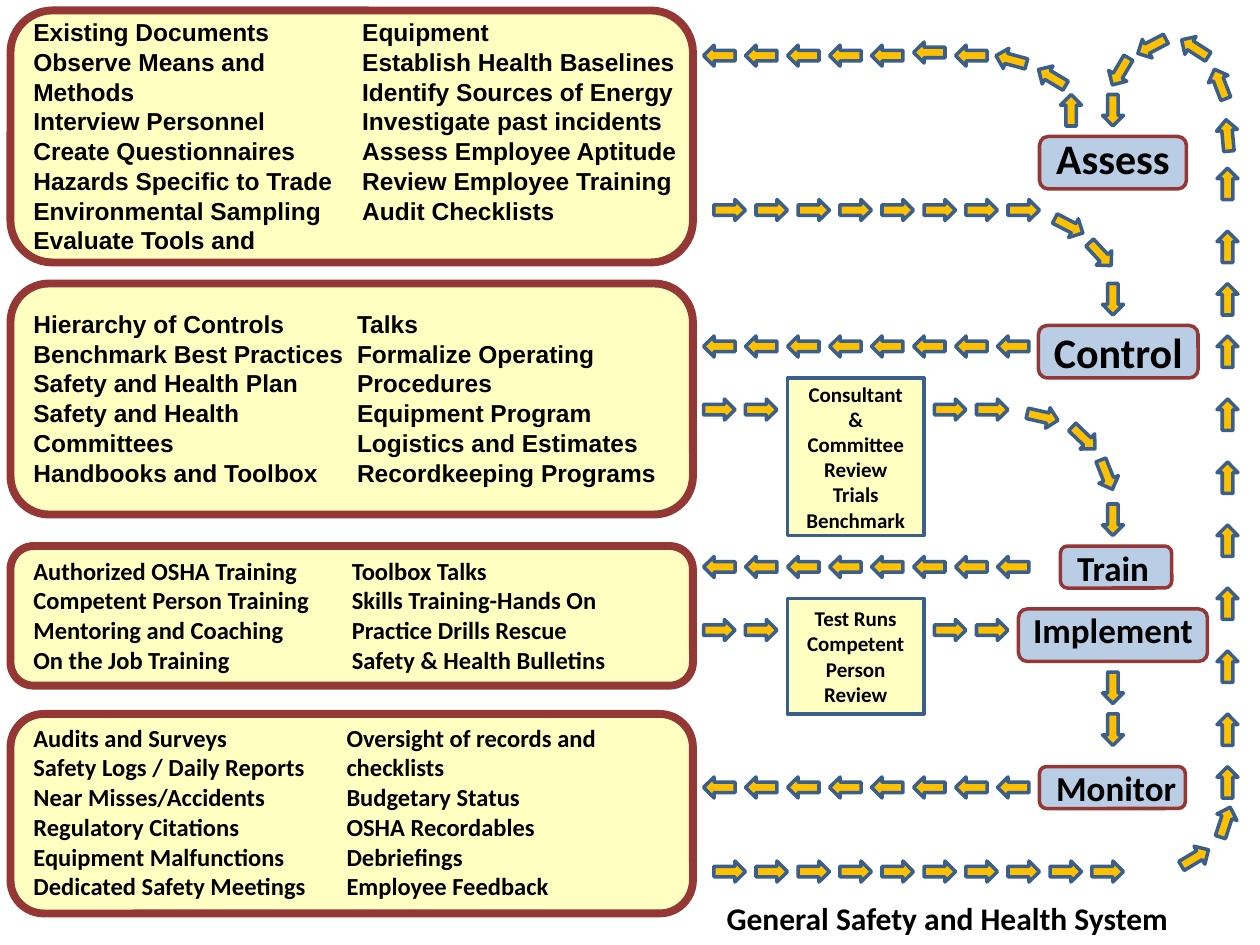
from pptx import Presentation
from pptx.dml.color import RGBColor
from pptx.enum.shapes import MSO_SHAPE as SHAPE
from pptx.enum.text import MSO_ANCHOR as ANCHOR, MSO_AUTO_SIZE as AUTO_SIZE, PP_ALIGN as ALIGN
from pptx.util import Pt

PX = 7620  # EMU in one px, 120 px to the inch
CREAM, SKY, AMBER = "FFFFC1", "B9CDE5", "FFC000"
MAROON, NAVY, BLACK = "953735", "3A5F8C", "000000"
LINE_PT = 17

# box, text offset, text width, lines in the first column, font, items
PANELS = [
    ((10, 10, 650, 240), (10, 0), 650, 8, "Arial", [
        "Existing Documents", "Observe Means and Methods", "Interview Personnel",
        "Create Questionnaires", "Hazards Specific to Trade", "Environmental Sampling",
        "Evaluate Tools and Equipment", "Establish Health Baselines",
        "Identify Sources of Energy", "Investigate past incidents",
        "Assess Employee Aptitude", "Review Employee Training", "Audit Checklists"]),
    ((10, 270, 650, 220), (10, 18), 640, 6, "Arial", [
        "Hierarchy of Controls", "Benchmark Best Practices", "Safety and Health Plan",
        "Safety and Health Committees", "Handbooks and Toolbox Talks",
        "Formalize Operating Procedures", "Equipment Program",
        "Logistics and Estimates", "Recordkeeping Programs"]),
    ((10, 520, 650, 133), (10, 3), 630, 4, "Calibri", [
        "Authorized OSHA Training", "Competent Person Training", "Mentoring and Coaching",
        "On the Job Training", "Toolbox Talks", "Skills Training-Hands On",
        "Practice Drills Rescue", "Safety & Health Bulletins"]),
    ((10, 680, 650, 190), (10, 2), 620, 6, "Calibri", [
        "Audits and Surveys", "Safety Logs / Daily Reports", "Near Misses/Accidents",
        "Regulatory Citations", "Equipment Malfunctions", "Dedicated Safety Meetings",
        "Oversight of records and checklists", "Budgetary Status", "OSHA Recordables",
        "Debriefings", "Employee Feedback"]),
]

# label, size, box, label box
STEPS = [
    ("Assess", 24, (990, 130, 140, 50), (950, 120, 220, 60)),
    ("Control", 24, (989, 310, 152, 50), (970, 310, 190, 50)),
    ("Train", 20, (1010, 520, 106, 40), (990, 520, 140, 40)),
    ("Implement", 20, (970, 580, 180, 50), (930, 560, 260, 80)),
    ("Monitor", 20, (990, 730, 139, 40), (960, 720, 206, 60)),
]

REVIEWS = [
    ((750, 360, 130, 150),
     ["Consultant", "&", "Committee", "Review", "Trials", "Benchmark"]),
    ((750, 570, 130, 110), ["Test Runs", "Competent", "Person", "Review"]),
]

# left, top, number of arrows, rotation
ARROW_ROWS = [
    (675, 38, 5, 90), (675, 315, 8, 90), (675, 525, 8, 90), (675, 735, 8, 90),
    (685, 185, 8, 270), (685, 815, 10, 270),
    (675, 375, 2, 270), (895, 375, 2, 270), (675, 585, 2, 270), (895, 585, 2, 270),
]
DOWN_TOPS = [90, 270, 480, 640, 680]
UP_TOPS = [160, 220, 270, *range(320, 681, 60), 730]
BENDS = [
    (875, 35, 90), (915, 38, 90), (953, 42, 105.2), (992, 59, 121), (1010, 90, 180),
    (1008, 200, 297.3), (1038, 227, 317.2),
    (983, 382, 282.8), (1022, 402, 313.7), (1044, 437, 338.4),
    (1128, 802, 239), (1157, 768, 198.2), (1159, 114, 174.7), (1152, 65, 158.9),
    (1128, 31, 122.5), (1087, 29, 62.3), (1057, 53, 30.5),
]


def color(hex_code):
    return RGBColor.from_string(hex_code)


def emu(box):
    return [v * PX for v in box]


def add_box(shapes, kind, box, fill, line, width=2):
    sp = shapes.add_shape(kind, *emu(box))
    sp.shadow.inherit = False
    sp.fill.solid()
    sp.fill.fore_color.rgb = color(fill)
    sp.line.color.rgb = color(line)
    sp.line.width = Pt(width)
    return sp


def write(sp, lines, size, font="Calibri", align=ALIGN.CENTER, anchor=ANCHOR.MIDDLE,
          spacing=None):
    tf = sp.text_frame
    tf.word_wrap = True
    tf.auto_size = AUTO_SIZE.NONE
    tf.vertical_anchor = anchor
    for i, line in enumerate(lines):
        p = tf.add_paragraph() if i else tf.paragraphs[0]
        p.alignment = align
        p.line_spacing = spacing
        r = p.add_run()
        r.text = line
        r.font.name, r.font.size, r.font.bold = font, Pt(size), True
        r.font.color.rgb = color(BLACK)


def add_panel(shapes, box, offset, width, rows, font, items):
    """Rounded panel holding a list that flows through two columns."""
    add_box(shapes, SHAPE.ROUNDED_RECTANGLE, box, CREAM, MAROON, 4.5)
    height = round(rows * LINE_PT * 120 / 72) + 16
    text_box = (box[0] + offset[0], box[1] + offset[1], width, height)
    sp = shapes.add_textbox(*emu(text_box))
    write(sp, items, 14, font, ALIGN.LEFT, ANCHOR.TOP, Pt(LINE_PT))
    sp.text_frame._txBody.bodyPr.set("numCol", "2")


def add_step(shapes, label, size, box, label_box):
    group = shapes.add_group_shape()
    add_box(group.shapes, SHAPE.ROUNDED_RECTANGLE, box, SKY, MAROON)
    write(group.shapes.add_textbox(*emu(label_box)), [label], size)


def add_review(shapes, box, lines):
    write(add_box(shapes, SHAPE.RECTANGLE, box, CREAM, NAVY), lines, 12)


def add_arrow(shapes, x, y, rotation=0):
    sp = add_box(shapes, SHAPE.DOWN_ARROW, (x, y, 20, 30), AMBER, NAVY)
    sp.rotation = rotation


def add_arrows(shapes):
    for x, y, count, rotation in ARROW_ROWS:
        for i in range(count):
            add_arrow(shapes, x + 40 * i, y, rotation)
    for y in DOWN_TOPS:
        add_arrow(shapes, 1050, y)
    for y in UP_TOPS:
        add_arrow(shapes, 1159, y, 180)
    for bend in BENDS:
        add_arrow(shapes, *bend)


def add_title(slide, box, text):
    sp = slide.shapes.title
    sp.left, sp.top, sp.width, sp.height = emu(box)
    write(sp, [text], 18, align=ALIGN.LEFT, anchor=ANCHOR.TOP)


def main():
    prs = Presentation()
    prs.slide_width, prs.slide_height = emu((1200, 900))
    slide = prs.slides.add_slide(prs.slide_layouts[5])
    shapes = slide.shapes
    for panel in PANELS:
        add_panel(shapes, *panel)
    for step in STEPS:
        add_step(shapes, *step)
    for review in REVIEWS:
        add_review(shapes, *review)
    add_arrows(shapes)
    add_title(slide, (680, 850, 540, 48), "General Safety and Health System")
    prs.save("out.pptx")


if __name__ == "__main__":
    main()
